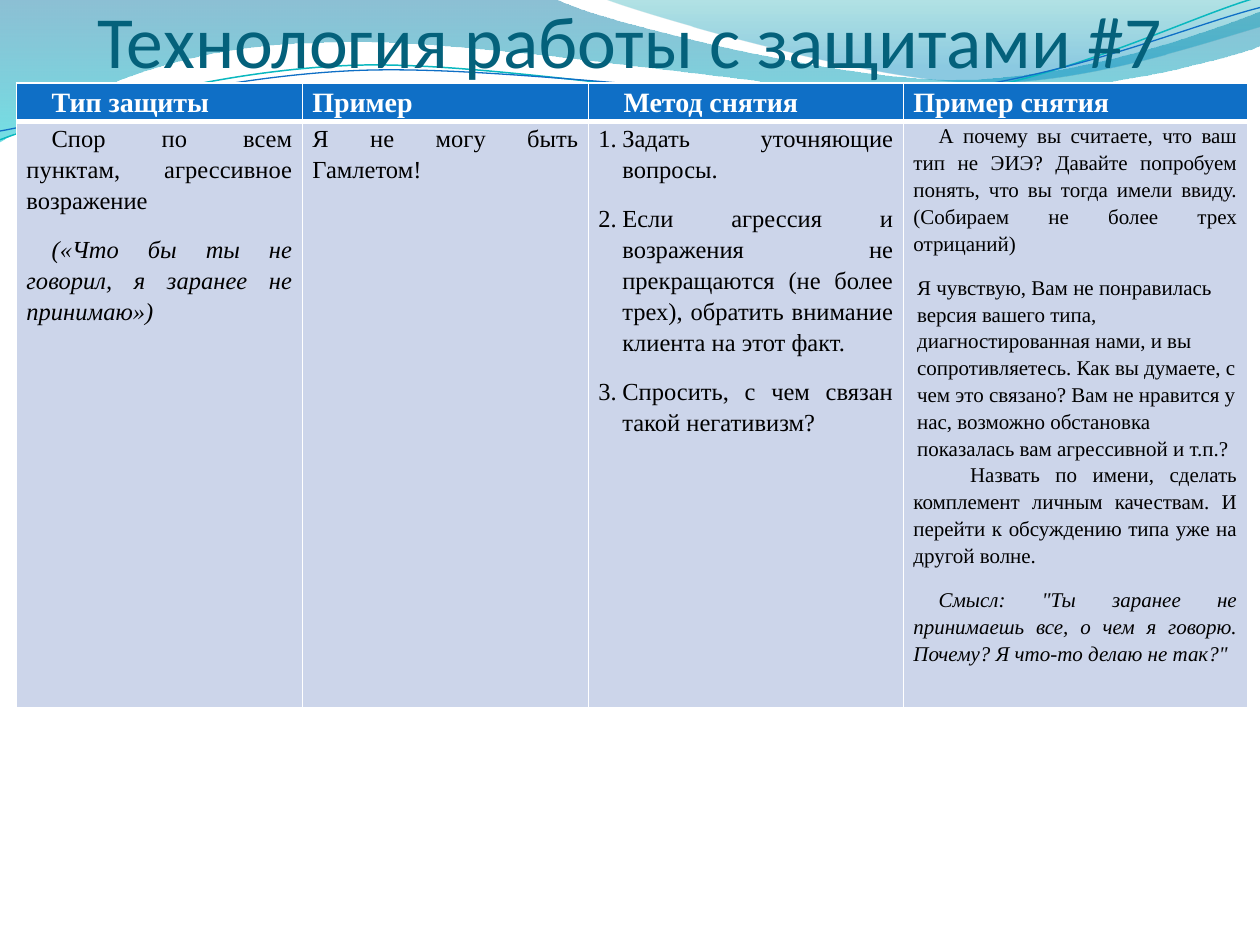
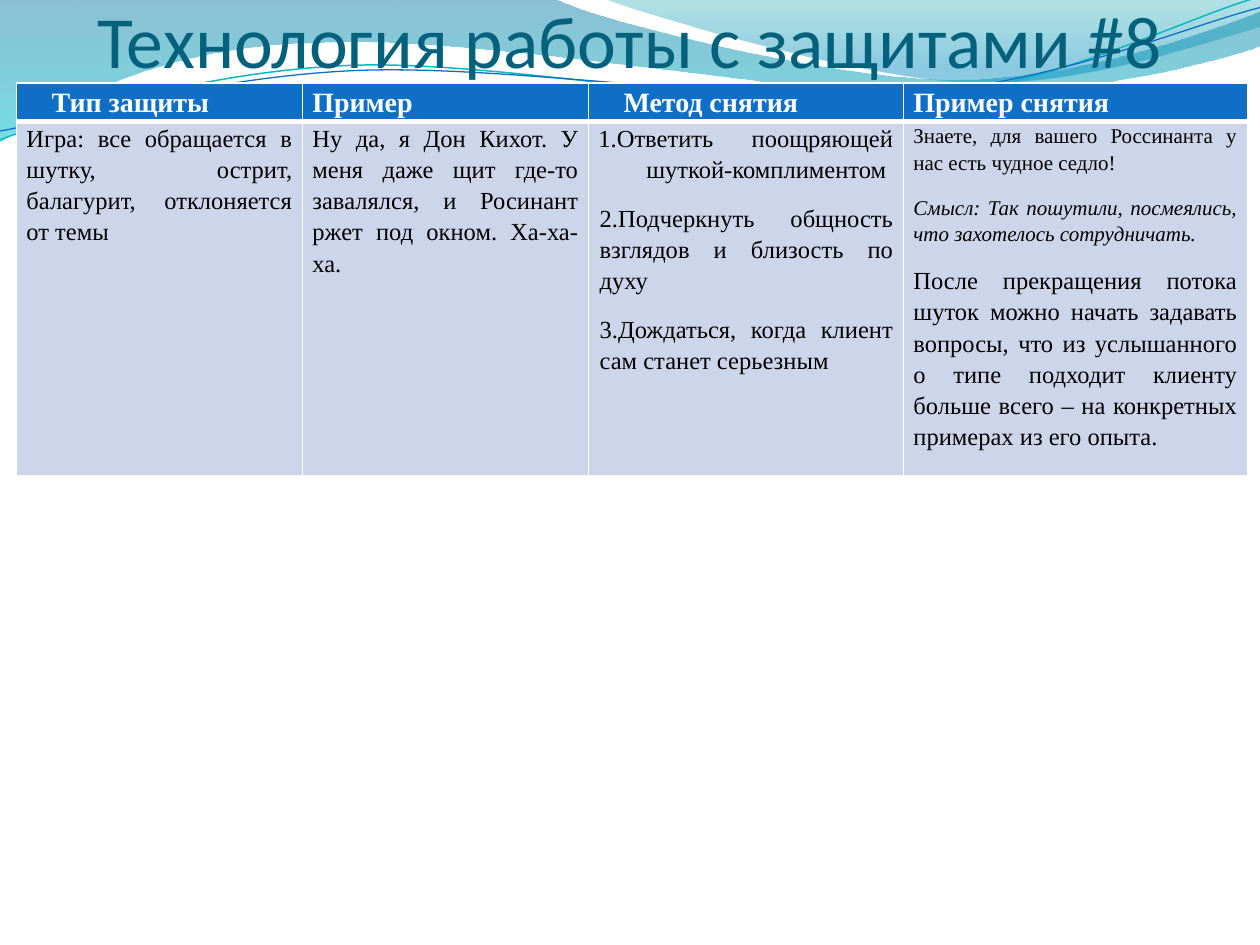
"""Build two slides on working with client defences, each a titled table under a wave band."""
from dataclasses import dataclass

from lxml import etree
from pptx import Presentation
from pptx import util as u
from pptx.dml.color import RGBColor
from pptx.enum import text
from pptx.oxml import ns


@dataclass(frozen=True)
class Theme:
    title_font: str = "Calibri"
    table_font: str = "Times New Roman"
    title_size: int = 42
    header_size: int = 16
    body_size: int = 14
    small_size: int = 12
    title: str = "04617B"
    blue: str = "0F6FC6"
    teal: str = "0AB8BF"
    pale: str = "CCD5EA"
    white: str = "FFFFFF"
    black: str = "000000"
    left_wave: tuple = ((0, "0074A1", 45), (1, "00C6CF", 55))
    right_wave: tuple = ((0, "00A1A9", 30), (0.8, "008BBF", 45))


THEME = Theme()


@dataclass(frozen=True)
class Passage:
    text: str
    size: int = THEME.body_size
    margin: float = 0
    indent: float = 0
    italic: bool = False
    numbered: bool = False
    justified: bool = True
    after: int = 10
    bold: bool = False
    color: str = THEME.black


FIRST_LINE = 0.2
COLUMN_WIDTHS = (2.27, 2.27, 2.5, 2.73)
HEADER_HEIGHT = 0.27
HEADERS = [
    [Passage(label, THEME.header_size, indent=indent, bold=True, color=THEME.white)]
    for label, indent in (("Тип защиты", FIRST_LINE), ("Пример", 0),
                          ("Метод снятия", FIRST_LINE), ("Пример снятия", 0))
]

LEFT_WAVE = [
    (0, -0.01), (4.4, -0.01), (4.76, 0.17, 6.64, 0.63, 7.58, 0.63),
    (8.53, 0.63, 9.58, 0.26, 10, 0.09), (10.01, 0.36),
    (9.83, 0.44, 8.7, 0.76, 7.46, 0.75), (6.22, 0.75, 3.82, 0.28, 2.57, 0.34),
    (1.29, 0.35, 0.46, 0.83, -0.01, 1.13),
]
RIGHT_WAVE = [
    (4.79, -0.01), (5.09, 0.11, 6.82, 0.62, 7.69, 0.65),
    (8.56, 0.69, 9.61, 0.32, 10, 0.21), (10, 0),
]
TEAL_CURVE = [
    (0, 1.11), (0.48, 0.93, 1.58, 0.57, 2.77, 0.52),
    (3.95, 0.47, 5.93, 0.89, 7.13, 0.8), (8.33, 0.71, 9.38, 0.15, 9.98, -0.02),
]
BLUE_CURVE = [
    (0, 1.04), (0.47, 0.96, 1.64, 0.61, 2.83, 0.56),
    (4.03, 0.51, 5.97, 0.83, 7.17, 0.75), (8.36, 0.67, 9.41, 0.21, 10, 0.06),
]

DEFENCES = [
    ("Технология работы с защитами #7", 4.42, [
        [Passage("Спор по всем пунктам, агрессивное возражение", indent=FIRST_LINE),
         Passage("(«Что бы ты не говорил, я заранее не принимаю»)",
                 indent=FIRST_LINE, italic=True)],
        [Passage("Я не могу быть Гамлетом!")],
        [Passage(step, margin=0.19, indent=-0.19, numbered=True) for step in (
            "Задать уточняющие вопросы.",
            "Если агрессия и возражения не прекращаются (не более трех), "
            "обратить внимание клиента на этот факт.",
            "Спросить, с чем связан такой негативизм?")],
        [Passage("А почему вы считаете, что ваш тип не ЭИЭ? Давайте попробуем понять, "
                 "что вы тогда имели ввиду. (Собираем не более трех отрицаний)",
                 THEME.small_size, indent=FIRST_LINE),
         Passage("Я чувствую, Вам не понравилась версия вашего типа, диагностированная "
                 "нами, и вы сопротивляетесь. Как вы думаете, с чем это связано? Вам не "
                 "нравится у нас, возможно обстановка показалась вам агрессивной и т.п.?",
                 THEME.small_size, margin=0.03, justified=False, after=0),
         Passage("Назвать по имени, сделать комплемент личным качествам. И перейти к "
                 "обсуждению типа уже на другой волне.", THEME.small_size, indent=0.45),
         Passage('Смысл: "Ты заранее не принимаешь все, о чем я говорю. Почему? '
                 'Я что-то делаю не так?"', THEME.small_size,
                 indent=FIRST_LINE, italic=True)],
    ]),
    ("Технология работы с защитами #8", 2.03, [
        [Passage("Игра: все обращается в шутку, острит, балагурит, отклоняется от темы")],
        [Passage("Ну да, я Дон Кихот. У меня даже щит где-то завалялся, и Росинант ржет "
                 "под окном. Ха-ха-ха.")],
        [Passage("1.Ответить поощряющей шуткой-комплиментом", margin=0.38, indent=-0.38),
         Passage("2.Подчеркнуть общность взглядов и близость по духу", margin=0.01),
         Passage("3.Дождаться, когда клиент сам станет серьезным", margin=0.01)],
        [Passage("Знаете, для вашего Россинанта у нас есть чудное седло!",
                 THEME.small_size),
         Passage("Смысл: Так пошутили, посмеялись, что захотелось сотрудничать.",
                 THEME.small_size, italic=True),
         Passage("После прекращения потока шуток можно начать задавать вопросы, что из "
                 "услышанного о типе подходит клиенту больше всего – на конкретных "
                 "примерах из его опыта.")],
    ]),
]


class Deck:
    def __init__(self, theme):
        self.theme = theme
        self.presentation = Presentation()
        self.presentation.slide_width = u.Inches(10)
        self.presentation.slide_height = u.Inches(7.5)
        self.slide = None

    def add_slide(self):
        self.slide = self.presentation.slides.add_slide(self.presentation.slide_layouts[6])

    def master_band(self):
        self.wave(LEFT_WAVE, self.theme.left_wave)
        self.wave(RIGHT_WAVE, self.theme.right_wave)
        self.curve(TEAL_CURVE, self.theme.teal, 0.85)
        self.curve(BLUE_CURVE, self.theme.blue, 0.75)
        master_tree = self.presentation.slide_master.shapes._spTree
        for number, shape in enumerate(list(self.slide.shapes), 20):
            shape.element.nvSpPr.cNvPr.set("id", str(number))
            master_tree.append(shape.element)

    def outline(self, segments, close):
        start, *rest = segments
        builder = self.slide.shapes.build_freeform(*map(u.Inches, start))
        builder.add_line_segments([tuple(map(u.Inches, segment[-2:])) for segment in rest],
                                  close=close)
        shape = builder.convert_to_shape()
        shape.shadow.inherit = False
        lines = list(shape.element.iter(ns.qn("a:lnTo")))
        for line, segment in zip(lines, rest):
            if len(segment) == 6:
                self.bend(shape, line, segment)
        return shape

    def bend(self, shape, line, segment):
        bezier = etree.Element(ns.qn("a:cubicBezTo"))
        for x, y in zip(segment[::2], segment[1::2]):
            etree.SubElement(bezier, ns.qn("a:pt"), x=str(u.Inches(x) - shape.left),
                             y=str(u.Inches(y) - shape.top))
        line.getparent().replace(line, bezier)

    def wave(self, segments, stops):
        shape = self.outline(segments, True)
        shape.line.fill.background()
        shape.fill.gradient()
        shape.fill.gradient_angle = 270
        for stop, (position, color, _) in zip(shape.fill.gradient_stops, stops):
            stop.position = position
            stop.color.rgb = RGBColor.from_string(color)
        for element, (_, _, opacity) in zip(shape.element.iter(ns.qn("a:srgbClr")), stops):
            etree.SubElement(element, ns.qn("a:alpha"), val=str(opacity * 1000))

    def curve(self, segments, color, width):
        shape = self.outline(segments, False)
        shape.fill.background()
        shape.line.color.rgb = RGBColor.from_string(color)
        shape.line.width = u.Pt(width)

    def format_run(self, run, font, size, color):
        run.font.name = font
        run.font.size = u.Pt(size)
        run.font.color.rgb = RGBColor.from_string(color)

    def title(self, words):
        box = self.slide.shapes.add_textbox(0, u.Inches(-0.04), u.Inches(10), u.Inches(0.7))
        frame = box.text_frame
        frame.word_wrap = True
        frame.vertical_anchor = text.MSO_ANCHOR.BOTTOM
        frame.margin_left = frame.margin_right = frame.margin_bottom = 0
        frame.margin_top = u.Inches(0.05)
        frame.text = words
        paragraph = frame.paragraphs[0]
        paragraph.alignment = text.PP_ALIGN.CENTER
        self.format_run(paragraph.runs[0], self.theme.title_font,
                        self.theme.title_size, self.theme.title)

    def passage(self, paragraph, passage):
        paragraph.text = passage.text
        paragraph.alignment = (text.PP_ALIGN.JUSTIFY if passage.justified
                               else text.PP_ALIGN.LEFT)
        paragraph.line_spacing = 1.15
        paragraph.space_after = u.Pt(passage.after)
        properties = paragraph._p.get_or_add_pPr()
        properties.set("marL", str(u.Inches(passage.margin)))
        properties.set("indent", str(u.Inches(passage.indent)))
        if passage.numbered:
            etree.SubElement(properties, ns.qn("a:buAutoNum"), type="arabicPeriod")
        run = paragraph.runs[0]
        self.format_run(run, self.theme.table_font, passage.size, passage.color)
        run.font.bold = passage.bold
        run.font.italic = passage.italic

    def borders(self, cell, widths):
        properties = cell._tc.get_or_add_tcPr()
        for side, width in zip("LRTB", widths):
            line = etree.SubElement(properties, ns.qn(f"a:ln{side}"), w=str(u.Pt(width)))
            fill = etree.SubElement(line, ns.qn("a:solidFill"))
            etree.SubElement(fill, ns.qn("a:srgbClr"), val=self.theme.white)

    def cell(self, cell, passages, fill, widths):
        cell.margin_left = cell.margin_right = u.Inches(0.08)
        cell.margin_top = cell.margin_bottom = 0
        self.borders(cell, widths)
        cell.fill.solid()
        cell.fill.fore_color.rgb = RGBColor.from_string(fill)
        frame = cell.text_frame
        for index, passage in enumerate(passages):
            paragraph = frame.add_paragraph() if index else frame.paragraphs[0]
            self.passage(paragraph, passage)
        paragraph.space_after = u.Pt(0)

    def table(self, body, body_height):
        heights = (HEADER_HEIGHT, body_height)
        table = self.slide.shapes.add_table(
            2, len(COLUMN_WIDTHS), u.Inches(0.13), u.Inches(0.66),
            u.Inches(sum(COLUMN_WIDTHS)), u.Inches(sum(heights))).table
        table.horz_banding = False
        for column, width in zip(table.columns, COLUMN_WIDTHS):
            column.width = u.Inches(width)
        for row, height in zip(table.rows, heights):
            row.height = u.Inches(height)
        styles = ((HEADERS, self.theme.blue, (1, 1, 1, 3)),
                  (body, self.theme.pale, (1, 1, 3, 1)))
        for row, (contents, fill, widths) in zip(table.rows, styles):
            for cell, passages in zip(row.cells, contents):
                self.cell(cell, passages, fill, widths)


def main():
    deck = Deck(THEME)
    for index, (title, body_height, body) in enumerate(DEFENCES):
        deck.add_slide()
        if index == 0:
            deck.master_band()
        deck.title(title)
        deck.table(body, body_height)
    deck.presentation.save("out.pptx")


if __name__ == "__main__":
    main()
